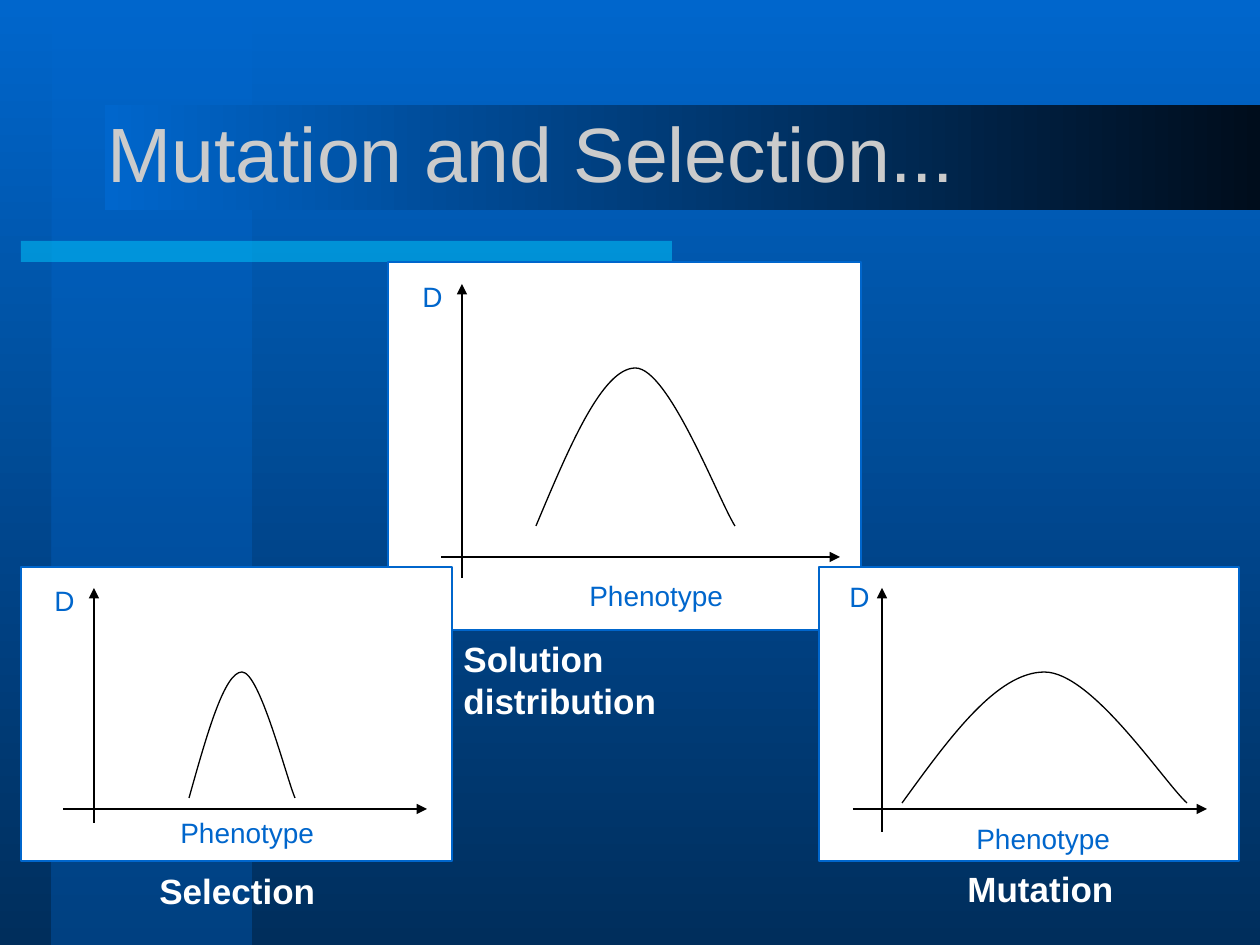
from lxml.etree import SubElement
from pptx import Presentation
from pptx.dml.color import RGBColor
from pptx.enum.shapes import MSO_CONNECTOR, MSO_SHAPE
from pptx.enum.text import MSO_ANCHOR, PP_ALIGN
from pptx.oxml.ns import qn
from pptx.util import Emu, Pt

EMU_PER_PX = 914400 / 126
COLORS = {
    "blue": "0066CC", "background_end": "002E5C", "strip_end": "0053A6",
    "band_end": "000D1C", "cyan": "00CCFF", "title": "CBCBCB",
    "white": "FFFFFF", "black": "000000",
}
# Bell curve in a unit box: start point, then two cubic segments
BELL = [(0, 1), (1 / 6, 1 / 2), (1 / 3, 0), (1 / 2, 0),
        (2 / 3, 0), (11 / 12, 5 / 6), (1, 1)]
PANELS = [
    {"box": (388, 262, 473, 368), "origin": (462, 557), "bottom": 578, "top": 284,
     "left": 441, "right": 840, "curve": (536, 368, 199, 158),
     "density": (410, 273), "phenotype": (577, 572)},
    {"box": (21, 567, 431, 294), "origin": (94, 809), "bottom": 823, "top": 588,
     "left": 63, "right": 427, "curve": (189, 672, 106, 126),
     "density": (42, 577), "phenotype": (168, 809)},
    {"box": (819, 567, 420, 294), "origin": (882, 809), "bottom": 832, "top": 588,
     "left": 853, "right": 1207, "curve": (902, 672, 285, 131),
     "density": (837, 573), "phenotype": (964, 815)},
]
CAPTIONS = [
    ("Selection", (147, 863, 181, 54), False),
    ("Mutation", (955, 861, 171, 54), False),
    ("Solution distribution", (451, 631, 359, 54), True),
]


def px(value):
    return Emu(round(value * EMU_PER_PX))


def rgb(name):
    return RGBColor.from_string(COLORS[name])


def write(frame, text, size=16, color="blue", bold=False, wrap=False):
    frame.word_wrap = wrap
    paragraph = frame.paragraphs[0]
    paragraph.alignment = PP_ALIGN.LEFT
    run = paragraph.add_run()
    run.text = text
    run.font.name = "Arial"
    run.font.size = Pt(size)
    run.font.bold = bold
    run.font.color.rgb = rgb(color)


def fill_gradient(fill, end, angle):
    fill.gradient()
    fill.gradient_angle = angle
    for stop, name, position in zip(fill.gradient_stops, ("blue", end), (0, 1)):
        stop.color.rgb = rgb(name)
        stop.position = position


def make_half_transparent(shape):
    for color in shape.element.spPr.iter(qn("a:srgbClr")):
        SubElement(color, qn("a:alpha"), val="50000")


class Canvas:
    def __init__(self, slide):
        self.slide = slide
        self.shapes = slide.shapes

    def rectangle(self, box, fill=None, line=None):
        shape = self.shapes.add_shape(MSO_SHAPE.RECTANGLE, *map(px, box))
        shape.shadow.inherit = False
        if fill:
            shape.fill.solid()
            shape.fill.fore_color.rgb = rgb(fill)
        if line:
            self.outline(shape, line)
        else:
            shape.line.fill.background()
        return shape

    def outline(self, shape, color="black"):
        shape.line.color.rgb = rgb(color)
        shape.line.width = Pt(0.75)

    def title(self, text, box):
        title = self.shapes.title
        title.left, title.top, title.width, title.height = map(px, box)
        title.text_frame.vertical_anchor = MSO_ANCHOR.MIDDLE
        write(title.text_frame, text, size=44, color="title", wrap=True)
        # The placeholder goes in front of the band
        title.element.getparent().append(title.element)

    def label(self, text, box, **style):
        text_box = self.shapes.add_textbox(*map(px, box))
        write(text_box.text_frame, text, **style)

    def arrow(self, start, end):
        connector = self.shapes.add_connector(
            MSO_CONNECTOR.STRAIGHT, *map(px, (*start, *end)))
        self.outline(connector)
        SubElement(connector.line._get_or_add_ln(), qn("a:tailEnd"), type="triangle")
        SubElement(connector.element.spPr, qn("a:effectLst"))

    def bell_curve(self, box):
        left, top, width, height = box
        points = [(px(left + x * width), px(top + y * height)) for x, y in BELL]
        builder = self.shapes.build_freeform(*points[0])
        builder.add_line_segments(points[1:], close=False)
        shape = builder.convert_to_shape()
        shape.shadow.inherit = False
        shape.fill.background()
        self.outline(shape)
        # Each three line points become one cubic segment
        lines = list(shape.element.iter(qn("a:lnTo")))
        contour = lines[0].getparent()
        for first in range(0, len(lines), 3):
            cubic = SubElement(contour, qn("a:cubicBezTo"))
            for line in lines[first:first + 3]:
                cubic.append(line[0])
                contour.remove(line)

    def panel(self, panel):
        """Draw one white plot with axes, curve and axis names."""
        x, y = panel["origin"]
        self.rectangle(panel["box"], "white", "blue")
        self.arrow((x, panel["bottom"]), (x, panel["top"]))
        self.arrow((panel["left"], y), (panel["right"], y))
        self.bell_curve(panel["curve"])
        self.label("Phenotype", (*panel["phenotype"], 159, 47))
        self.label("D", (*panel["density"], 45, 47))


def main():
    presentation = Presentation()
    presentation.slide_width, presentation.slide_height = px(1260), px(945)
    canvas = Canvas(presentation.slides.add_slide(presentation.slide_layouts[5]))

    fill_gradient(canvas.slide.background.fill, "background_end", 270)
    strip = canvas.rectangle((52, 0, 200, 945))
    fill_gradient(strip.fill, "strip_end", 270)
    make_half_transparent(strip)
    make_half_transparent(canvas.rectangle((21, 241, 651, 21), "cyan"))
    band = canvas.rectangle((105, 105, 1155, 105))
    fill_gradient(band.fill, "band_end", 0)
    canvas.title("Mutation and Selection...", (95, 73, 1071, 158))

    for panel in PANELS:
        canvas.panel(panel)
    for text, box, wrap in CAPTIONS:
        canvas.label(text, box, size=20, color="white", bold=True, wrap=wrap)

    presentation.save("out.pptx")


if __name__ == "__main__":
    main()
